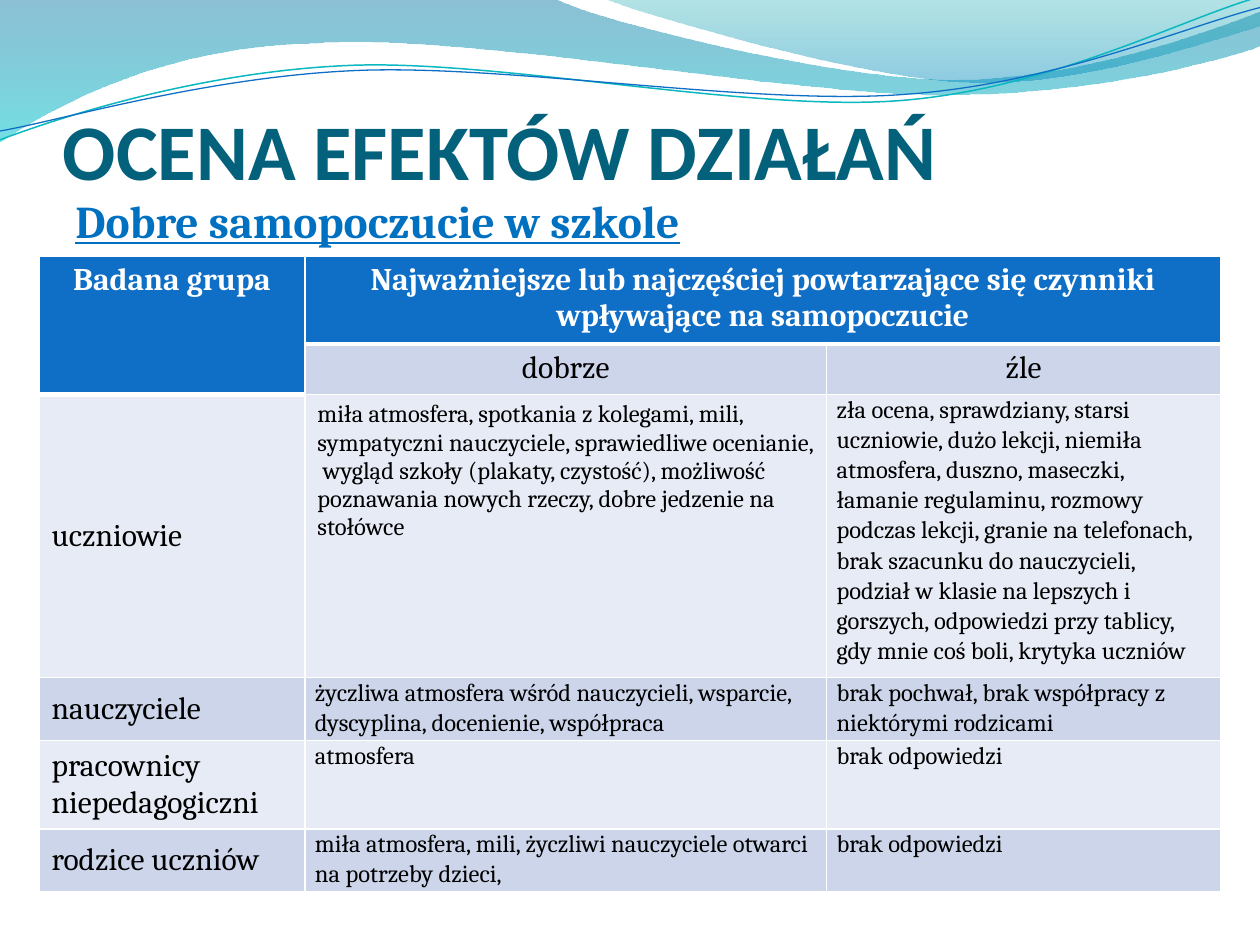
"""Builds the slide on school well-being: wave header, title, subtitle and survey table."""
from lxml import etree
from pptx import Presentation
from pptx.dml.color import RGBColor
from pptx.enum.text import MSO_ANCHOR, PP_ALIGN
from pptx.oxml.ns import qn
from pptx.util import Inches, Pt

TOP, MIDDLE, BOTTOM = MSO_ANCHOR.TOP, MSO_ANCHOR.MIDDLE, MSO_ANCHOR.BOTTOM
LEFT, CENTER = PP_ALIGN.LEFT, PP_ALIGN.CENTER

COLORS = {
    "title": "04617B", "subtitle": "0070C0", "header": "0F6FC6",
    "dark_band": "CCD5EA", "light_band": "E7EBF5", "white": "FFFFFF", "black": "000000",
    "wave_blue": "0074A1", "wave_cyan": "00C6CF", "wave_teal": "00A1A9",
    "wave_sky": "008BBF", "teal_line": "0AB8BF", "blue_line": "0F6FC6",
}

TITLE = "OCENA EFEKTÓW DZIAŁAŃ"
SUBTITLE = "Dobre samopoczucie w szkole"
GROUP_HEADER = "Badana grupa"
FACTORS_HEADER = "Najważniejsze lub najczęściej powtarzające się czynniki wpływające na samopoczucie"
ANSWERS = [
    ("", "dobrze", "źle"),
    ("uczniowie",
     "miła atmosfera, spotkania z kolegami, mili, sympatyczni nauczyciele, sprawiedliwe "
     "ocenianie,  wygląd szkoły (plakaty, czystość), możliwość poznawania nowych rzeczy, "
     "dobre jedzenie na stołówce",
     "zła ocena, sprawdziany, starsi uczniowie, dużo lekcji, niemiła atmosfera, duszno, "
     "maseczki, łamanie regulaminu, rozmowy podczas lekcji, granie na telefonach, brak "
     "szacunku do nauczycieli, podział w klasie na lepszych i gorszych, odpowiedzi przy "
     "tablicy, gdy mnie coś boli, krytyka uczniów"),
    ("nauczyciele",
     "życzliwa atmosfera wśród nauczycieli, wsparcie, dyscyplina, docenienie, współpraca",
     "brak pochwał, brak współpracy z niektórymi rodzicami"),
    ("pracownicy niepedagogiczni", "atmosfera", "brak odpowiedzi"),
    ("rodzice uczniów",
     "miła atmosfera, mili, życzliwi nauczyciele otwarci na potrzeby dzieci,",
     "brak odpowiedzi"),
]
COLUMN_WIDTHS = [2.11, 4.14, 3.13]
ROW_HEIGHTS = [0.67, 0.39, 2.15, 0.48, 0.68, 0.48]

WAVES = [
    ([(0, 0), (4.4, -0.01), (4.76, 0.17, 6.64, 0.63, 7.58, 0.63),
      (8.53, 0.63, 9.58, 0.26, 10, 0.09), (10.01, 0.36),
      (9.83, 0.44, 8.7, 0.76, 7.46, 0.75), (6.22, 0.75, 3.82, 0.28, 2.57, 0.34),
      (1.29, 0.36, 0.46, 0.83, -0.01, 1.13)],
     [("wave_blue", 45), ("wave_cyan", 55)]),
    ([(4.79, -0.01), (5.09, 0.11, 6.82, 0.62, 7.69, 0.65),
      (8.56, 0.69, 9.61, 0.32, 10, 0.21), (10, 0)],
     [("wave_teal", 30), ("wave_sky", 45)]),
]
WAVE_LINES = [
    ([(0, 1.11), (0.48, 0.93, 1.58, 0.57, 2.77, 0.52), (3.95, 0.47, 5.93, 0.89, 7.13, 0.8),
      (8.33, 0.71, 9.38, 0.15, 9.98, -0.02)], "teal_line", 0.85),
    ([(0, 1.04), (0.47, 0.96, 1.64, 0.61, 2.83, 0.56), (4.03, 0.51, 5.97, 0.84, 7.17, 0.75),
      (8.36, 0.67, 9.41, 0.21, 10, 0.06)], "blue_line", 0.75),
]


def rgb(name):
    return RGBColor.from_string(COLORS[name])


def add_outline(slide, segments, closed):
    points = [(Inches(segment[i]), Inches(segment[i + 1]))
              for segment in segments for i in range(0, len(segment), 2)]
    builder = slide.shapes.build_freeform(*points[0], scale=1)
    builder.add_line_segments(points[1:], close=closed)
    outline = builder.convert_to_shape()
    outline.shadow.inherit = False
    steps = iter(list(outline._element.spPr.iter(qn("a:lnTo"))))
    for segment in segments[1:]:
        parts = [next(steps) for _ in range(len(segment) // 2)]
        if len(parts) == 3:
            curve = etree.Element(qn("a:cubicBezTo"))
            parts[0].addprevious(curve)
            for part in parts:
                curve.append(part[0])
                part.getparent().remove(part)
    return outline


def add_waves(slide):
    for segments, stops in WAVES:
        wave = add_outline(slide, segments, True)
        wave.line.fill.background()
        wave.fill.gradient()
        wave.fill.gradient_angle = 270
        for stop, (color, _) in zip(wave.fill.gradient_stops, stops):
            stop.color.rgb = rgb(color)
        tints = wave._element.spPr.iter(qn("a:srgbClr"))
        for tint, (_, opacity) in zip(tints, stops):
            etree.SubElement(tint, qn("a:alpha"), val=str(opacity * 1000))
    for segments, color, width in WAVE_LINES:
        curve = add_outline(slide, segments, False)
        curve.fill.background()
        curve.line.color.rgb = rgb(color)
        curve.line.width = Pt(width)


def style(paragraph, font, size, color, bold=False, underline=None):
    for run in paragraph.runs:
        run.font.name = font
        run.font.size = Pt(size)
        run.font.color.rgb = rgb(color)
        run.font.bold = bold
        run.font.underline = underline


def add_heading(slide, text, box, insets, anchor):
    frame = slide.shapes.add_textbox(*map(Inches, box)).text_frame
    frame.word_wrap = True
    frame.vertical_anchor = anchor
    (frame.margin_left, frame.margin_top,
     frame.margin_right, frame.margin_bottom) = map(Inches, insets)
    frame.text = text
    return frame.paragraphs[0]


def set_borders(cell, bottom_width):
    for side, width in (("L", 1), ("R", 1), ("T", 1), ("B", bottom_width)):
        border = etree.SubElement(cell._tc.get_or_add_tcPr(), qn("a:ln" + side),
                                  w=str(Pt(width)))
        fill = etree.SubElement(border, qn("a:solidFill"))
        etree.SubElement(fill, qn("a:srgbClr"), val=COLORS["white"])


def fill_cell(cell, text, row, column):
    header = row == 0 or (row == 1 and column == 0)
    set_borders(cell, 3 if header else 1)
    cell.fill.solid()
    band = "dark_band" if row % 2 else "light_band"
    cell.fill.fore_color.rgb = rgb("header" if header else band)
    cell.text = text
    paragraph = cell.text_frame.paragraphs[0]
    answer = row > 1 and column > 0
    style(paragraph, "Cambria", 14 if answer else 18, "white" if header else "black", header)
    paragraph.alignment = CENTER if row < 2 else LEFT
    cell.vertical_anchor = MIDDLE if row > 1 and column == 0 else TOP
    if answer and (row, column) != (2, 1):
        cell.margin_left = cell.margin_right = Inches(0.08)
        cell.margin_top = cell.margin_bottom = 0
        paragraph.line_spacing = 1.07


def add_survey(slide):
    rows = [(GROUP_HEADER, FACTORS_HEADER, "")] + ANSWERS
    survey = slide.shapes.add_table(
        len(rows), len(COLUMN_WIDTHS), Inches(0.31), Inches(2.03),
        Inches(sum(COLUMN_WIDTHS)), Inches(sum(ROW_HEIGHTS))).table
    for column, width in zip(survey.columns, COLUMN_WIDTHS):
        column.width = Inches(width)
    for row, height in zip(survey.rows, ROW_HEIGHTS):
        row.height = Inches(height)
    for r, texts in enumerate(rows):
        for c, text in enumerate(texts):
            fill_cell(survey.cell(r, c), text, r, c)
    survey.cell(0, 0).merge(survey.cell(1, 0))
    survey.cell(0, 1).merge(survey.cell(0, 2))


def main():
    deck = Presentation()
    deck.slide_width, deck.slide_height = Inches(10), Inches(7.5)
    slide = deck.slides.add_slide(deck.slide_layouts[6])
    add_waves(slide)
    title = add_heading(slide, TITLE, (0.5, 0.77, 9, 0.79), (0, 0.05, 0, 0), BOTTOM)
    style(title, "Calibri", 45, "title", True)
    subtitle = add_heading(slide, SUBTITLE, (0.5, 1.48, 9, 5.43), (0.1, 0.05, 0.1, 0.05), TOP)
    subtitle.space_before = Pt(5)
    style(subtitle, "Cambria", 26, "subtitle", True, True)
    add_survey(slide)
    deck.save("out.pptx")


if __name__ == "__main__":
    main()
